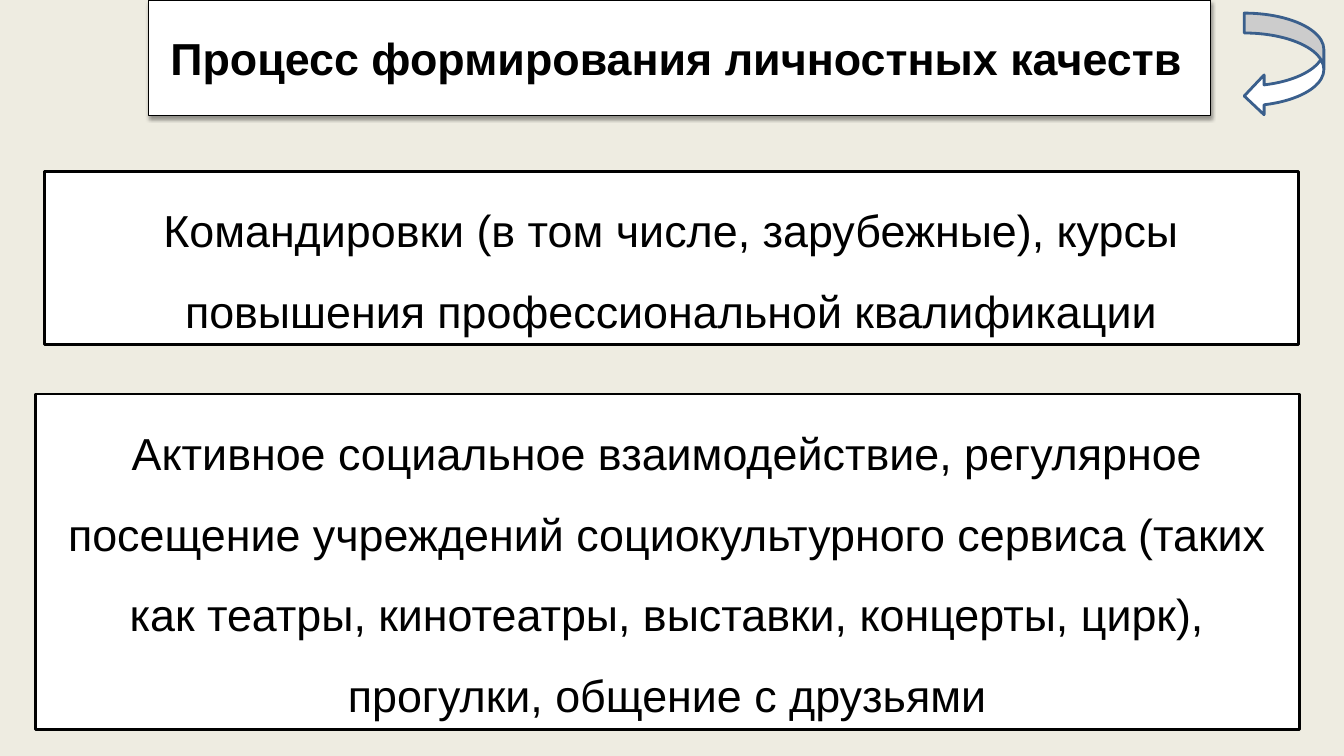
from lxml import etree
from pptx import Presentation
from pptx.dml.color import RGBColor
from pptx.enum.shapes import MSO_SHAPE
from pptx.enum.text import MSO_ANCHOR, MSO_AUTO_SIZE, PP_ALIGN
from pptx.oxml.ns import qn
from pptx.util import Inches, Pt

RECTANGLE = MSO_SHAPE.RECTANGLE
CURVED_ARROW = MSO_SHAPE.CURVED_LEFT_ARROW
TOP, MIDDLE = MSO_ANCHOR.TOP, MSO_ANCHOR.MIDDLE
LEFT, CENTER = PP_ALIGN.LEFT, PP_ALIGN.CENTER
FIXED, GROW = MSO_AUTO_SIZE.NONE, MSO_AUTO_SIZE.SHAPE_TO_FIT_TEXT
COLORS = {"background": "EEECE1", "box": "FFFFFF", "ink": "000000", "arrow": "3A5F8C"}
TITLE = "Процесс формирования личностных качеств"
BOXES = [
    ((0.44, 1.7, 12.44, 1.72),
     "Командировки (в том числе, зарубежные), курсы повышения "
     "профессиональной квалификации"),
    ((0.35, 3.91, 12.54, 3.33),
     "Активное социальное взаимодействие, регулярное посещение учреждений "
     "социокультурного сервиса (таких как театры, кинотеатры, выставки, "
     "концерты, цирк), прогулки, общение с друзьями"),
]


def color(name):
    return RGBColor.from_string(COLORS[name])


def write(shape, text, bold=False, align=CENTER, anchor=TOP, spacing=1.0,
          inset=0.1, fit=FIXED):
    frame = shape.text_frame
    frame.word_wrap = True
    frame.auto_size = fit
    frame.vertical_anchor = anchor
    frame.margin_left = frame.margin_right = Inches(inset)
    frame.margin_top = frame.margin_bottom = Inches(0.05)
    paragraph = frame.paragraphs[0]
    paragraph.alignment = align
    paragraph.line_spacing = spacing
    run = paragraph.add_run()
    run.text = text
    run.font.name = "Arial"
    run.font.size = Pt(32)
    run.font.bold = bold
    run.font.color.rgb = color("ink")


class SlideBuilder:
    """Draws styled elements on one slide."""

    def __init__(self, presentation):
        self.slide = presentation.slides.add_slide(presentation.slide_layouts[5])
        self.slide.background.fill.solid()
        self.slide.background.fill.fore_color.rgb = color("background")

    def outline(self, shape, line="ink", width=2):
        shape.fill.solid()
        shape.fill.fore_color.rgb = color("box")
        shape.line.color.rgb = color(line)
        shape.line.width = Pt(width)

    def title(self, text, left, top, width, height):
        shape = self.slide.shapes.title
        shape.left, shape.top = Inches(left), Inches(top)
        shape.width, shape.height = Inches(width), Inches(height)
        self.outline(shape, width=0.75)
        self.shadow(shape)
        write(shape, text, bold=True, align=LEFT, anchor=MIDDLE, inset=0.22)

    def shadow(self, shape):
        effects = etree.SubElement(shape.element.spPr, qn("a:effectLst"))
        shadow = etree.SubElement(
            effects, qn("a:outerShdw"), blurRad=str(Pt(3.1)), dist=str(Pt(1.6)),
            dir="5400000", rotWithShape="0")
        tint = etree.SubElement(shadow, qn("a:srgbClr"), val=COLORS["ink"])
        etree.SubElement(tint, qn("a:alpha"), val="38000")

    def shape(self, preset, position, line="ink"):
        shape = self.slide.shapes.add_shape(preset, *map(Inches, position))
        shape.shadow.inherit = False
        self.outline(shape, line)
        return shape

    def text_box(self, position, text):
        write(self.shape(RECTANGLE, position), text, spacing=1.5, fit=GROW)


def main():
    presentation = Presentation()
    presentation.slide_width = Inches(13.33)
    presentation.slide_height = Inches(7.5)
    builder = SlideBuilder(presentation)
    builder.title(TITLE, 1.47, 0, 10.54, 1.15)
    for position, text in BOXES:
        builder.text_box(position, text)
    builder.shape(CURVED_ARROW, (12.34, 0.13, 0.79, 1.02), line="arrow")
    presentation.save("out.pptx")


if __name__ == "__main__":
    main()
